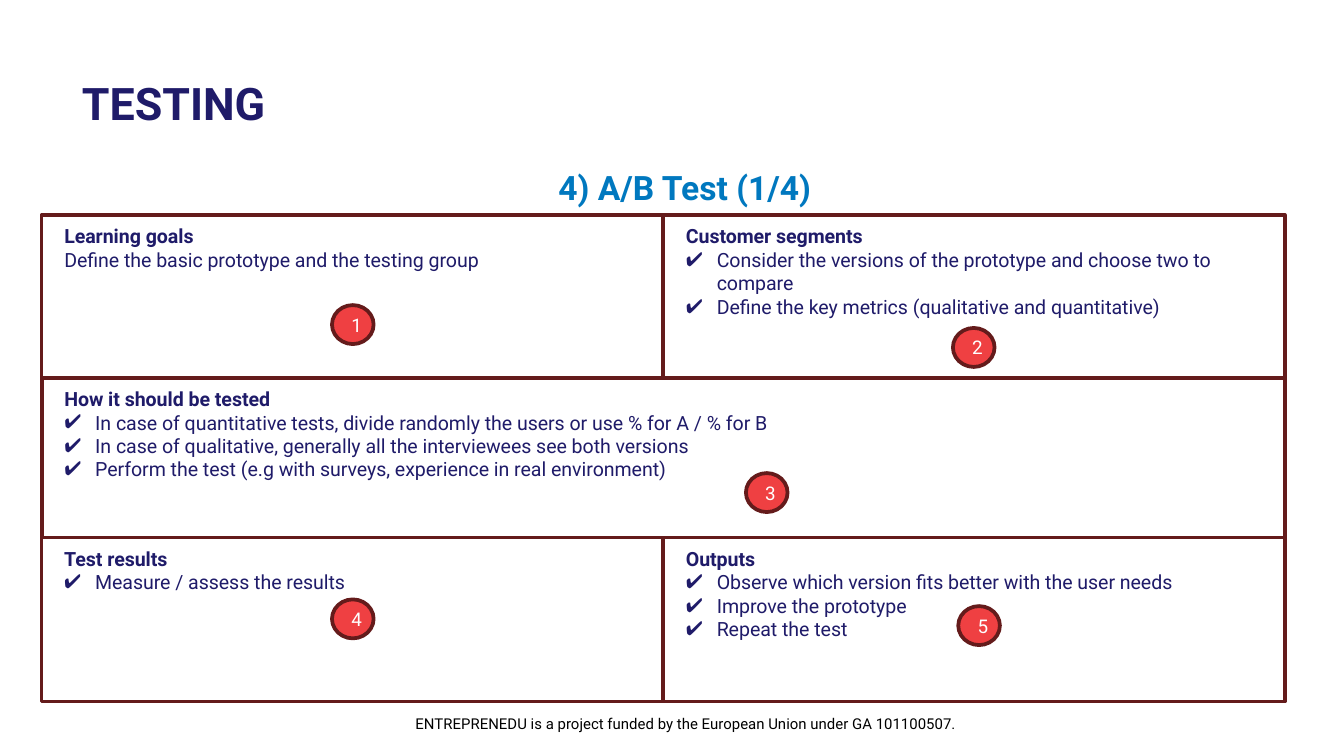
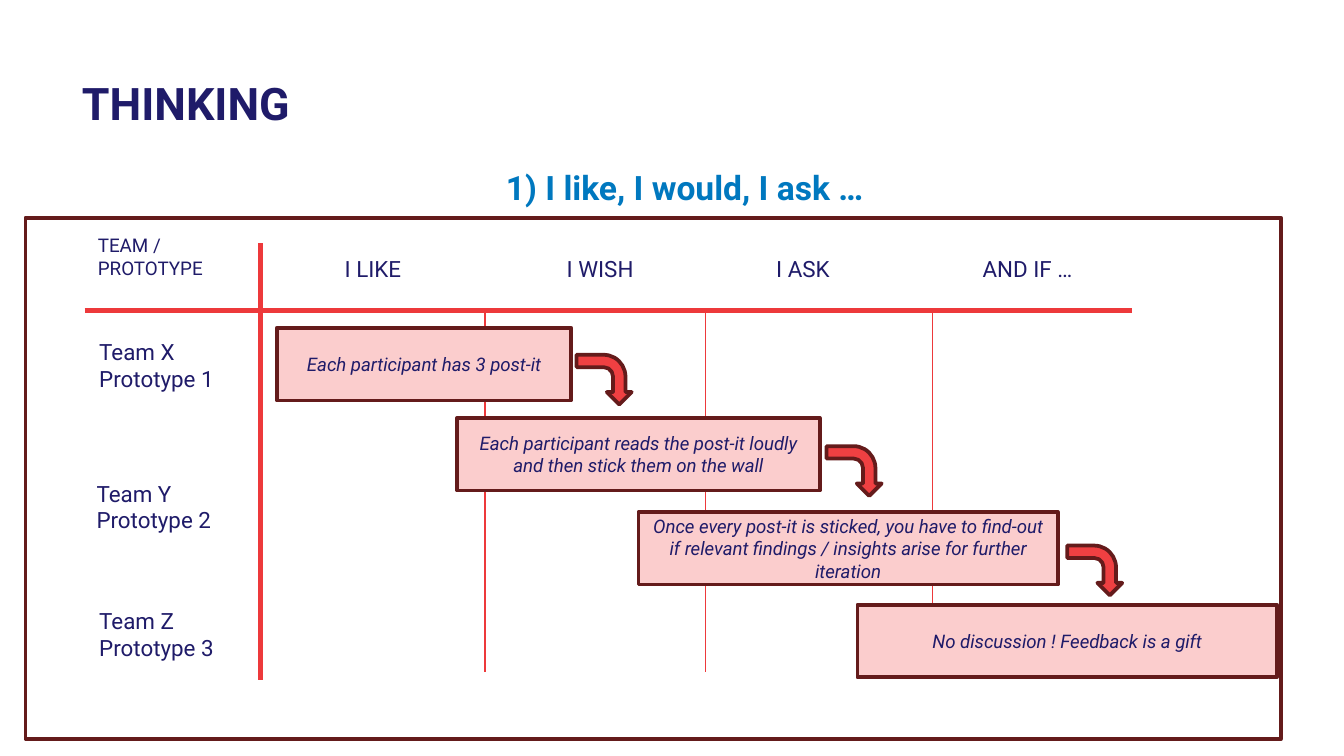
from dataclasses import dataclass

from lxml import etree
from pptx import Presentation
from pptx.dml.color import RGBColor
from pptx.enum.shapes import MSO_CONNECTOR, MSO_SHAPE
from pptx.enum.text import MSO_ANCHOR, MSO_AUTO_SIZE, PP_ALIGN
from pptx.oxml.ns import qn
from pptx.util import Inches, Pt

LEFT, CENTER = PP_ALIGN.LEFT, PP_ALIGN.CENTER
TOP, MIDDLE = MSO_ANCHOR.TOP, MSO_ANCHOR.MIDDLE
GROW, FIXED = MSO_AUTO_SIZE.SHAPE_TO_FIT_TEXT, MSO_AUTO_SIZE.NONE
RECTANGLE, OVAL, BENT_ARROW = MSO_SHAPE.RECTANGLE, MSO_SHAPE.OVAL, MSO_SHAPE.BENT_ARROW
STRAIGHT = MSO_CONNECTOR.STRAIGHT
TITLE_ONLY = 5

SLIDE_WIDTH = 10
SLIDE_HEIGHT = SLIDE_WIDTH * 9 / 16


@dataclass(frozen=True)
class Theme:
    font: str = "Roboto"
    navy: str = "1F1B69"
    blue: str = "0078BF"
    maroon: str = "641B1B"
    red: str = "EF4042"
    rule_red: str = "ED393B"
    pink: str = "FBCDCD"
    white: str = "FFFFFF"
    black: str = "000000"
    title_size: float = 24
    subtitle_size: float = 18
    heading_size: float = 12
    cell_size: float = 10.5
    small_size: float = 10.1
    note_size: float = 10
    footer_size: float = 8
    outline: float = 2
    axis: float = 2.5
    hairline: float = 0.75


THEME = Theme()


@dataclass(frozen=True)
class Box:
    left: float
    top: float
    width: float
    height: float

    def lengths(self):
        return tuple(map(Inches, (self.left, self.top, self.width, self.height)))


@dataclass(frozen=True)
class TextStyle:
    size: float
    color: str = THEME.navy
    bold: bool = False
    italic: bool = False
    align: PP_ALIGN = LEFT


@dataclass(frozen=True)
class Cell:
    frame: Box
    text_width: float
    text_height: float
    heading: str
    lines: tuple[str, ...]
    bulleted: bool = True


@dataclass(frozen=True)
class Label:
    text: str
    left: float
    top: float


@dataclass(frozen=True)
class Note:
    text: str
    box: Box


TITLE = TextStyle(THEME.title_size, bold=True)
SUBTITLE = TextStyle(THEME.subtitle_size, THEME.blue, bold=True, align=CENTER)
FOOTER = TextStyle(THEME.footer_size, THEME.black, align=CENTER)
CELL_HEADING = TextStyle(THEME.cell_size, bold=True)
CELL_LINE = TextStyle(THEME.cell_size)
MARKER = TextStyle(THEME.small_size, THEME.white, align=CENTER)
CORNER = TextStyle(THEME.small_size)
COLUMN = TextStyle(THEME.heading_size, align=CENTER)
ROW = TextStyle(THEME.heading_size)
NOTE = TextStyle(THEME.note_size, italic=True, align=CENTER)

# Canvas grid of the A/B test
FULL_WIDTH = 9.25
HALF_WIDTH = FULL_WIDTH / 2
LEFT_COLUMN = 0.31
RIGHT_COLUMN = LEFT_COLUMN + HALF_WIDTH
ROW_TOPS, ROW_HEIGHT = (1.6, 2.81, 4), 1.22

CELLS = (
    Cell(Box(LEFT_COLUMN, ROW_TOPS[0], HALF_WIDTH, ROW_HEIGHT), 3.31, 0.63, "Learning goals",
         ("Define the basic prototype and the testing group",), bulleted=False),
    Cell(Box(RIGHT_COLUMN, ROW_TOPS[0], HALF_WIDTH, ROW_HEIGHT), 4.52, 0.81, "Customer segments",
         ("Consider the versions of the prototype and choose two to compare",
          "Define the key metrics (qualitative and quantitative)")),
    Cell(Box(LEFT_COLUMN, ROW_TOPS[1], FULL_WIDTH, ROW_HEIGHT), 5.95, 0.81,
         "How it should be tested",
         ("In case of quantitative tests, divide randomly the users or use % for A / % for B",
          "In case of qualitative, generally all the interviewees see both versions",
          "Perform the test (e.g with surveys, experience in real environment)")),
    Cell(Box(LEFT_COLUMN, ROW_TOPS[2], HALF_WIDTH, ROW_HEIGHT), 4.34, 0.45, "Test results",
         ("Measure / assess the results",)),
    Cell(Box(RIGHT_COLUMN, ROW_TOPS[2], HALF_WIDTH, ROW_HEIGHT), 4.34, 0.81, "Outputs",
         ("Observe which version fits better with the user needs",
          "Improve the prototype", "Repeat the test")),
)
MARKERS = (Label("1", 2.47, 2.27), Label("2", 7.09, 2.44), Label("3", 5.55, 3.52),
           Label("4", 2.47, 4.46), Label("5", 7.13, 4.51))

# Feedback board
AXIS_TOP, COLUMN_TOP = 2.31, 1.85
COLUMN_HEADS = (Label("I LIKE", 2.25, COLUMN_TOP), Label("I WISH", 3.94, COLUMN_TOP),
                Label("I ASK", 5.45, COLUMN_TOP), Label("AND IF …", 7.12, COLUMN_TOP))
DIVIDERS = (3.61, 5.25, 6.94)
ROW_HEADS = (Label("Team X Prototype 1", 0.64, 2.47), Label("Team Y Prototype 2", 0.62, 3.52),
             Label("Team Z Prototype 3", 0.64, 4.47))
NOTE_HEIGHT = 0.54
NOTES = (
    Note("Each participant has 3 post-it", Box(2.06, 2.44, 2.19, NOTE_HEIGHT)),
    Note("Each participant reads the post-it loudly and then stick them on the wall",
         Box(3.4, 3.11, 2.7, NOTE_HEIGHT)),
    Note("Once every post-it is sticked, you have to find-out if relevant findings / insights "
         "arise for further iteration", Box(4.75, 3.81, 3.12, NOTE_HEIGHT)),
    Note("No discussion ! Feedback is a gift", Box(6.38, 4.5, 3.12, NOTE_HEIGHT)),
)
ARROWS = ((4.31, 2.62), (6.17, 3.3), (7.96, 4.04))


def set_frame(text_frame, anchor=TOP, auto_size=GROW, vertical_inset: float = 0.05) -> None:
    text_frame.word_wrap = True
    text_frame.auto_size = auto_size
    text_frame.vertical_anchor = anchor
    text_frame.margin_left = text_frame.margin_right = Inches(0.1)
    text_frame.margin_top = text_frame.margin_bottom = Inches(vertical_inset)


def write(paragraph, text: str, style: TextStyle) -> None:
    paragraph.text = text
    paragraph.alignment = style.align
    font = paragraph.font
    font.name = THEME.font
    font.size = Pt(style.size)
    font.bold = style.bold
    font.italic = style.italic
    font.color.rgb = RGBColor.from_string(style.color)


def add_check_bullet(paragraph) -> None:
    properties = paragraph._p.get_or_add_pPr()
    properties.set("marL", str(Inches(0.23)))
    properties.set("indent", str(-Inches(0.23)))
    color = etree.SubElement(properties, qn("a:buClr"))
    etree.SubElement(color, qn("a:srgbClr")).set("val", THEME.navy)
    etree.SubElement(properties, qn("a:buFont")).set("typeface", THEME.font)
    etree.SubElement(properties, qn("a:buChar")).set("char", "✔")


def add_text(slide, box: Box, text: str, style: TextStyle, vertical_inset: float = 0.05):
    text_frame = slide.shapes.add_textbox(*box.lengths()).text_frame
    set_frame(text_frame, vertical_inset=vertical_inset)
    write(text_frame.paragraphs[0], text, style)
    return text_frame


def add_outlined(slide, kind, box: Box, fill: str):
    shape = slide.shapes.add_shape(kind, *box.lengths())
    shape.shadow.inherit = False
    shape.fill.solid()
    shape.fill.fore_color.rgb = RGBColor.from_string(fill)
    shape.line.color.rgb = RGBColor.from_string(THEME.maroon)
    shape.line.width = Pt(THEME.outline)
    return shape


def add_labelled(slide, kind, box: Box, fill: str, text: str, style: TextStyle) -> None:
    shape = add_outlined(slide, kind, box, fill)
    set_frame(shape.text_frame, MIDDLE, FIXED)
    write(shape.text_frame.paragraphs[0], text, style)


def add_rule(slide, start: tuple[float, float], end: tuple[float, float], weight: float) -> None:
    connector = slide.shapes.add_connector(STRAIGHT, *map(Inches, start + end))
    connector.line.color.rgb = RGBColor.from_string(THEME.rule_red)
    connector.line.width = Pt(weight)
    etree.SubElement(connector._element.spPr, qn("a:effectLst"))


def add_titled_slide(presentation, title: str, subtitle: str):
    slide = presentation.slides.add_slide(presentation.slide_layouts[TITLE_ONLY])
    placeholder = slide.shapes.title
    placeholder.left, placeholder.top, placeholder.width, placeholder.height = Box(
        0.51, 0.51, 6.06, 0.5).lengths()
    set_frame(placeholder.text_frame)
    write(placeholder.text_frame.paragraphs[0], title, TITLE)
    add_text(slide, Box(0.19, 1.19, 9.81, 0.4), subtitle, SUBTITLE)
    return slide


def add_cell(slide, cell: Cell) -> None:
    frame = cell.frame
    add_outlined(slide, RECTANGLE, frame, THEME.white)
    text_box = Box(frame.left + 0.07, frame.top + 0.02, cell.text_width, cell.text_height)
    text_frame = add_text(slide, text_box, cell.heading, CELL_HEADING)
    for line in cell.lines:
        paragraph = text_frame.add_paragraph()
        if cell.bulleted:
            add_check_bullet(paragraph)
        write(paragraph, line, CELL_LINE)


def build_testing(presentation) -> None:
    slide = add_titled_slide(presentation, "TESTING", "4) A/B Test (1/4)")
    add_text(slide, Box(1.56, 5.25, 7.09, 0.34),
             "ENTREPRENEDU is a project funded by the European Union under GA 101100507.",
             FOOTER, vertical_inset=0.1)
    for cell in CELLS:
        add_cell(slide, cell)
    for marker in MARKERS:
        add_labelled(slide, OVAL, Box(marker.left, marker.top, 0.31, 0.29), THEME.red,
                     marker.text, MARKER)


def build_thinking(presentation) -> None:
    slide = add_titled_slide(presentation, "THINKING", "1) I like, I would, I ask …")
    add_outlined(slide, RECTANGLE, Box(0.19, 1.62, 9.34, 3.88), THEME.white)
    add_rule(slide, (0.63, AXIS_TOP), (8.42, AXIS_TOP), THEME.axis)
    add_rule(slide, (1.94, 1.81), (1.94, 5.06), THEME.axis)
    for x in DIVIDERS:
        add_rule(slide, (x, AXIS_TOP), (x, 5), THEME.hairline)
    add_text(slide, Box(0.63, 1.69, 1.17, 0.44), "TEAM / PROTOTYPE", CORNER)
    for head in COLUMN_HEADS:
        add_text(slide, Box(head.left, head.top, 1.05, 0.3), head.text, COLUMN)
    for head in ROW_HEADS:
        add_text(slide, Box(head.left, head.top, 1.36, 0.5), head.text, ROW)
    for note in NOTES:
        add_labelled(slide, RECTANGLE, note.box, THEME.pink, note.text, NOTE)
    for left, top in ARROWS:
        arrow = add_outlined(slide, BENT_ARROW, Box(left, top, 0.37, 0.41), THEME.red)
        arrow.rotation = 90
        arrow.adjustments[3] = 0.44


def main() -> None:
    presentation = Presentation()
    presentation.slide_width = Inches(SLIDE_WIDTH)
    presentation.slide_height = Inches(SLIDE_HEIGHT)
    build_testing(presentation)
    build_thinking(presentation)
    presentation.save("out.pptx")


if __name__ == "__main__":
    main()
